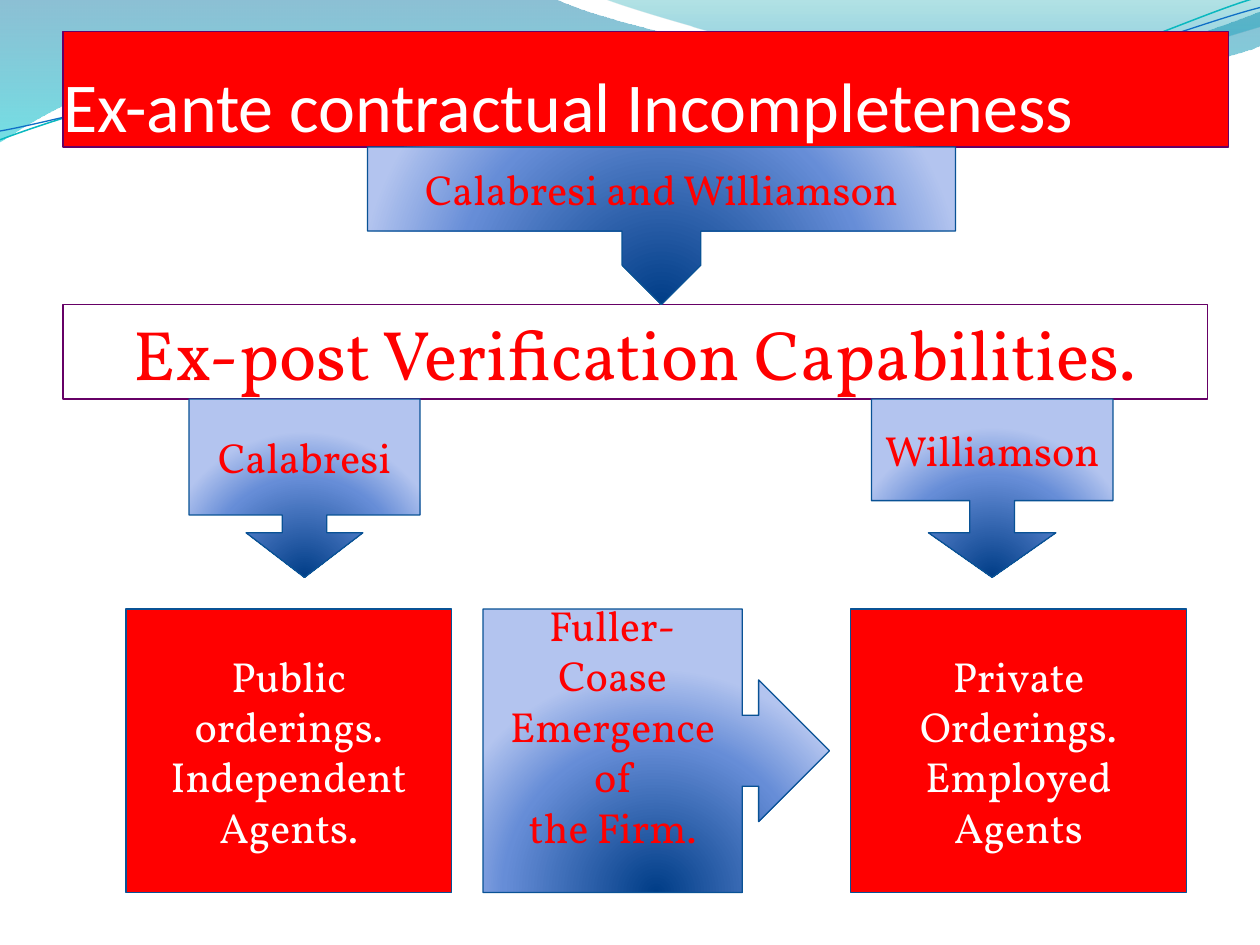
from dataclasses import dataclass

from lxml import etree
from pptx import Presentation
from pptx.dml.color import RGBColor
from pptx.enum.shapes import MSO_SHAPE
from pptx.enum.text import MSO_ANCHOR, MSO_AUTO_SIZE, PP_ALIGN
from pptx.oxml.ns import qn
from pptx.util import Inches, Pt

RECTANGLE = MSO_SHAPE.RECTANGLE
DOWN_CALLOUT = MSO_SHAPE.DOWN_ARROW_CALLOUT
RIGHT_CALLOUT = MSO_SHAPE.RIGHT_ARROW_CALLOUT
MIDDLE, BOTTOM, TOP = MSO_ANCHOR.MIDDLE, MSO_ANCHOR.BOTTOM, MSO_ANCHOR.TOP
LEFT, CENTER = PP_ALIGN.LEFT, PP_ALIGN.CENTER
NO_AUTOFIT = MSO_AUTO_SIZE.NONE


@dataclass(frozen=True)
class Theme:
    red: str = "FF0000"
    white: str = "FFFFFF"
    purple: str = "660066"
    blue: str = "095295"
    teal_line: str = "0AB8BF"
    blue_line: str = "0F6FC6"
    heading_font: str = "Calibri"
    body_font: str = "Vollkorn"
    large: int = 40
    normal: int = 24
    # Gradient stops: position, colour, opacity in percent
    callout: tuple = ((0, "003D87", 100), (68, "668DD7", 100), (100, "B3C4EF", 100))
    left_wave: tuple = ((0, "0074A1", 45), (100, "00C6CF", 55))
    right_wave: tuple = ((0, "00A1A9", 30), (80, "008BBF", 45))


def on_grid(place):
    """Snap left, top, width and height to a grid of twelfths of an inch."""
    return [Inches(round(value * 12) / 12) for value in place]


def write_text(frame, text, *, font, size, color, align=CENTER, anchor=MIDDLE,
               insets=(0.1, 0.05, 0.1, 0.05)):
    """Fill a text frame, one paragraph for each line of text."""
    frame.word_wrap = True
    frame.auto_size = NO_AUTOFIT
    frame.vertical_anchor = anchor
    (frame.margin_left, frame.margin_top,
     frame.margin_right, frame.margin_bottom) = map(Inches, insets)
    for number, line in enumerate(text.split("\n")):
        para = frame.add_paragraph() if number else frame.paragraphs[0]
        para.alignment = align
        span = para.add_run()
        span.text = line
        span.font.name = font
        span.font.size = Pt(size)
        span.font.color.rgb = RGBColor.from_string(color)


def paint_gradient(shape, stops, radial=False):
    """Give a shape a vertical or a radial gradient."""
    shape.fill.gradient()
    gradient = shape._element.spPr.find(qn("a:gradFill"))
    for child in list(gradient):
        gradient.remove(child)
    stop_list = etree.SubElement(gradient, qn("a:gsLst"))
    for position, color, opacity in stops:
        stop = etree.SubElement(stop_list, qn("a:gs"), pos=str(position * 1000))
        tint = etree.SubElement(stop, qn("a:srgbClr"), val=color)
        if opacity < 100:
            etree.SubElement(tint, qn("a:alpha"), val=str(opacity * 1000))
    if radial:
        shade = etree.SubElement(gradient, qn("a:path"), path="circle")
        etree.SubElement(shade, qn("a:fillToRect"),
                         l="50000", t="130000", r="50000", b="-30000")
    else:
        etree.SubElement(gradient, qn("a:lin"), ang="5400000", scaled="0")


def bend(shape, segments):
    """Turn the line segments that have control points into cubic curves."""
    lines = list(shape._element.iter(qn("a:lnTo")))
    for line, segment in zip(lines, segments):
        if len(segment) == 6:
            curve = etree.Element(qn("a:cubicBezTo"))
            for x, y in zip(segment[::2], segment[1::2]):
                etree.SubElement(curve, qn("a:pt"), x=str(Inches(x) - shape.left),
                                 y=str(Inches(y) - shape.top))
            line.getparent().replace(line, curve)


class SlideBuilder:
    def __init__(self, deck, page, theme):
        self.backdrop = deck.slide_master.shapes._spTree
        self.page = page
        self.theme = theme

    def outline(self, shape, color, width=0.75):
        shape.line.color.rgb = RGBColor.from_string(color)
        shape.line.width = Pt(width)

    def fill(self, shape, color):
        shape.fill.solid()
        shape.fill.fore_color.rgb = RGBColor.from_string(color)

    def wave(self, start, *segments, stops=None, line=None, width=0.75):
        """Draw a wave on the master; a segment has 2 numbers, a curve has 6."""
        builder = self.page.shapes.build_freeform(*map(Inches, start), scale=1.0)
        builder.add_line_segments([tuple(map(Inches, segment[-2:]))
                                   for segment in segments], close=bool(stops))
        shape = builder.convert_to_shape()
        bend(shape, segments)
        shape.shadow.inherit = False
        if stops:
            paint_gradient(shape, stops)
            shape.line.fill.background()
        else:
            shape.fill.background()
            self.outline(shape, line, width)
        self.backdrop.append(shape._element)

    def placeholder(self, box, place, text, fill=None, **text_format):
        box.left, box.top, box.width, box.height = on_grid(place)
        if fill:
            self.fill(box, fill)
        self.outline(box, self.theme.purple)
        write_text(box.text_frame, text, size=self.theme.large, **text_format)

    def shape(self, kind, place, text, color, **text_format):
        box = self.page.shapes.add_shape(kind, *on_grid(place))
        box.shadow.inherit = False
        self.outline(box, self.theme.blue)
        write_text(box.text_frame, text, font=self.theme.body_font,
                   size=self.theme.normal, color=color, **text_format)
        return box

    def panel(self, place, text):
        self.fill(self.shape(RECTANGLE, place, text, self.theme.white), self.theme.red)

    def callout(self, kind, place, text, adjustments, **text_format):
        box = self.shape(kind, place, text, self.theme.red, **text_format)
        for number, value in enumerate(adjustments):
            box.adjustments[number] = value
        paint_gradient(box, self.theme.callout, radial=True)


def main():
    theme = Theme()
    deck = Presentation()
    deck.slide_width, deck.slide_height = Inches(10), Inches(7.5)
    page = deck.slides.add_slide(deck.slide_layouts[1])
    slide = SlideBuilder(deck, page, theme)

    # Waves along the top edge
    slide.wave((0, -0.01), (4.4, -0.01), (4.76, 0.17, 6.64, 0.63, 7.58, 0.63),
               (8.53, 0.63, 9.58, 0.26, 10, 0.09), (10.01, 0.36),
               (9.83, 0.44, 8.7, 0.76, 7.46, 0.75),
               (6.22, 0.75, 3.82, 0.28, 2.57, 0.34),
               (1.29, 0.35, 0.46, 0.83, -0.01, 1.13), stops=theme.left_wave)
    slide.wave((4.79, -0.01), (5.09, 0.11, 6.82, 0.62, 7.69, 0.65),
               (8.56, 0.69, 9.61, 0.32, 10, 0.21), (10, 0), stops=theme.right_wave)
    slide.wave((0, 1.11), (0.48, 0.93, 1.58, 0.57, 2.77, 0.52),
               (3.95, 0.47, 5.93, 0.89, 7.13, 0.8),
               (8.33, 0.71, 9.38, 0.15, 9.98, -0.02), line=theme.teal_line, width=0.85)
    slide.wave((0, 1.04), (0.47, 0.96, 1.64, 0.61, 2.83, 0.56),
               (4.03, 0.51, 5.97, 0.83, 7.17, 0.75),
               (8.36, 0.67, 9.41, 0.21, 10, 0.06), line=theme.blue_line)

    # Title and central statement
    slide.placeholder(page.shapes.title, (0.5, 0.25, 9.25, 0.92),
                      "Ex-ante contractual Incompleteness", fill=theme.red,
                      font=theme.heading_font, color=theme.white,
                      align=LEFT, anchor=BOTTOM, insets=(0, 0.05, 0, 0))
    statement = page.placeholders[1]
    slide.placeholder(statement, (0.5, 2.42, 9.08, 0.75),
                      "Ex-post Verification Capabilities.",
                      font=theme.body_font, color=theme.red, anchor=TOP)
    bullet_format = statement.text_frame.paragraphs[0]._p.get_or_add_pPr()
    bullet_format.set("marL", str(Inches(0.3)))
    bullet_format.set("indent", str(Inches(-0.3)))
    etree.SubElement(bullet_format, qn("a:buNone"))

    # Arrows leading down
    slide.callout(DOWN_CALLOUT, (2.92, 1.17, 4.67, 1.25), "Calabresi and Williamson",
                  (0.5, 0.25, 0.25, 0.534))
    slide.callout(DOWN_CALLOUT, (1.5, 3.17, 1.83, 1.42), "Calabresi",
                  (0.25, 0.327, 0.25, 0.65))
    slide.callout(DOWN_CALLOUT, (6.92, 3.17, 1.92, 1.42), "Williamson",
                  (0.25, 0.357, 0.25, 0.57))

    # Bottom row: two orderings and the step between them
    row_top, row_height = 4.83, 2.25
    slide.panel((1, row_top, 2.58, row_height),
                "Public orderings.\nIndependent\nAgents.")
    slide.panel((6.75, row_top, 2.67, row_height),
                "Private Orderings.\nEmployed\nAgents")
    slide.callout(RIGHT_CALLOUT, (3.83, row_top, 2.75, row_height),
                  "Fuller-Coase\nEmergence\nof\nthe Firm.",
                  (0.25, 0.25, 0.25, 0.748), insets=(0.1, 0.05, 0.1, 0.45))

    deck.save("out.pptx")


if __name__ == "__main__":
    main()
